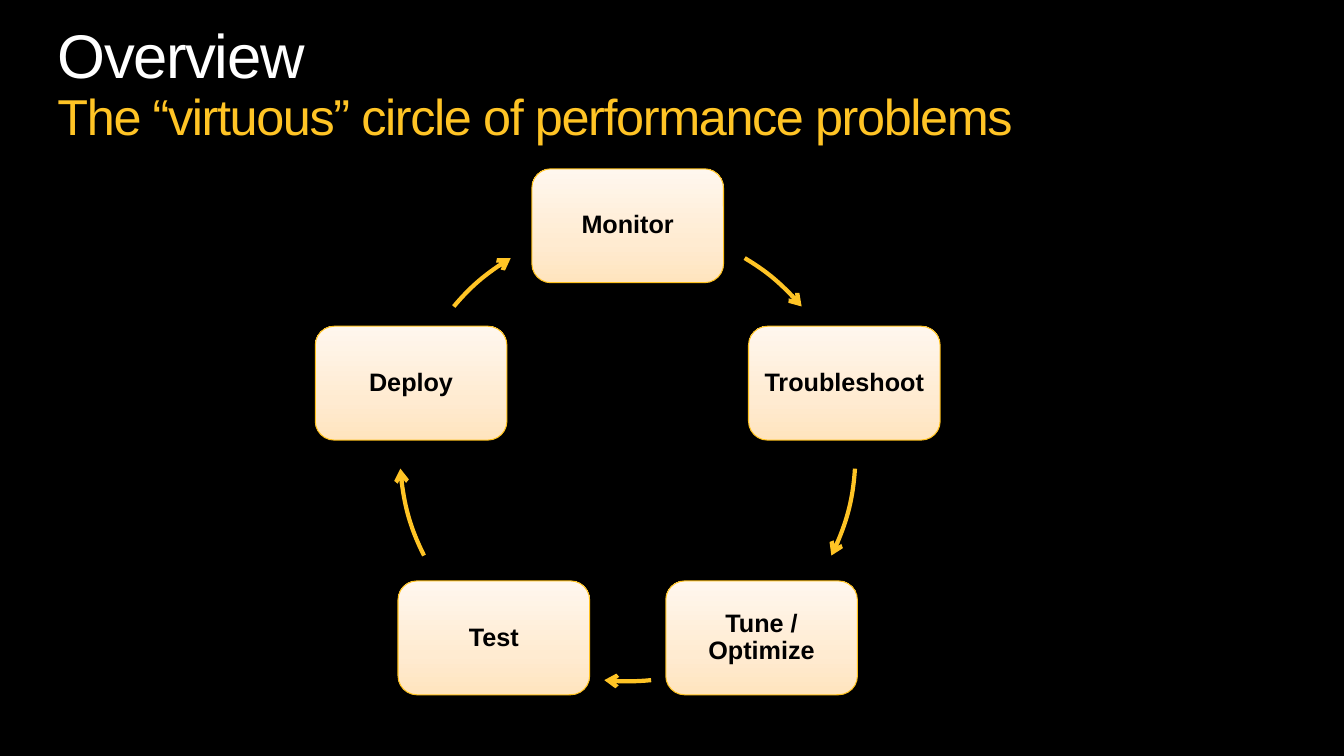
"""Build the slide that shows performance work as a circle of five steps."""
from copy import deepcopy
from math import cos, radians, sin

from lxml.etree import SubElement
from pptx import Presentation
from pptx.dml.color import RGBColor
from pptx.enum.shapes import MSO_SHAPE
from pptx.enum.text import MSO_ANCHOR, PP_ALIGN
from pptx.oxml.ns import qn
from pptx.util import Cm, Pt

MID_X, MID_Y, RADIUS = 15.82, 11.43, 5.74
BOX_W, BOX_H = 4.83, 2.87
STEPS = ["Monitor", "Troubleshoot", "Tune / Optimize", "Test", "Deploy"]
ARCS = [(300.9, 319.8), (3.8, 26.6), (84.1, 95.9), (153.4, 176.2), (220.2, 239.1)]


def color(code):
    return RGBColor.from_string(code)


def write(para, text, size=18, fill="000000", bold=False, track=0):
    run = para.add_run()
    run.text = text
    font = run.font
    font.name, font.size, font.bold = "Arial", Pt(size), bold
    font.color.rgb = color(fill)
    if track:
        run._r.get_or_add_rPr().set("spc", str(track * 100))


class Deck:
    gold = "FFC425"
    edge = "FFC21F"
    tints = [(0, "FFE4BE"), (0.35, "FFEBD1"), (1, "FFF7EE")]

    def __init__(self):
        self.prs = Presentation()
        self.prs.slide_width, self.prs.slide_height = Cm(33.87), Cm(19.05)
        self.slide = self.prs.slides.add_slide(self.prs.slide_layouts[6])
        back = self.slide.background.fill
        back.solid()
        back.fore_color.rgb = color("000000")

    def frame(self, frame, inset):
        frame.word_wrap = True
        frame.margin_left = frame.margin_right = Cm(inset)
        frame.margin_top = frame.margin_bottom = Cm(inset)
        para = frame.paragraphs[0]
        para.line_spacing = 0.9
        return para

    def title(self, head, sub):
        box = self.slide.shapes.add_textbox(Cm(1.45), Cm(0.64), Cm(30.96), Cm(3.07))
        para = self.frame(box.text_frame, 0)
        write(para, head, size=44, fill="FFFFFF", track=-1)
        para.add_line_break()
        write(para, sub, size=36, fill=self.gold, track=-1)

    def shape(self, kind, mid, size, line, width, shade, drop):
        (x, y), (w, h) = mid, size
        shape = self.slide.shapes.add_shape(
            kind, Cm(x - w / 2), Cm(y - h / 2), Cm(w), Cm(h))
        shape.line.color.rgb = color(line)
        shape.line.width = Pt(width)
        shape.shadow.inherit = False
        cast = SubElement(
            shape._element.spPr.find(qn("a:effectLst")), qn("a:outerShdw"),
            blurRad=str(Pt(3.1)), dist=str(Pt(drop)), dir="5400000", rotWithShape="0")
        tone = SubElement(cast, qn("a:srgbClr"), val="000000")
        SubElement(tone, qn("a:alpha"), val=str(shade * 1000))
        return shape

    def box(self, text, mid):
        box = self.shape(MSO_SHAPE.ROUNDED_RECTANGLE, mid, (BOX_W, BOX_H),
                         self.edge, 0.75, 38, 1.6)
        box.fill.gradient()
        box.fill.gradient_angle = 90
        stops = box._element.spPr.find(qn("a:gradFill")).find(qn("a:gsLst"))
        stops.append(deepcopy(stops[-1]))
        for stop, (place, tint) in zip(box.fill.gradient_stops, self.tints):
            stop.position = place
            stop.color.rgb = color(tint)
        box.text_frame.vertical_anchor = MSO_ANCHOR.MIDDLE
        para = self.frame(box.text_frame, 0.18)
        para.alignment = PP_ALIGN.CENTER
        write(para, text, bold=True)

    def arc(self, start, end):
        arc = self.shape(MSO_SHAPE.ARC, (MID_X, MID_Y), (2 * RADIUS, 2 * RADIUS),
                         self.gold, 3, 35, 1.8)
        arc.fill.background()
        arc.adjustments[0], arc.adjustments[1] = start * 0.6, end * 0.6
        SubElement(arc.line._get_or_add_ln(), qn("a:tailEnd"), type="arrow")


def main():
    deck = Deck()
    deck.title("Overview", "The “virtuous” circle of performance problems")
    for i, (step, (start, end)) in enumerate(zip(STEPS, ARCS)):
        turn = radians(i * 360 / len(STEPS) - 90)
        deck.box(step, (MID_X + RADIUS * cos(turn), MID_Y + RADIUS * sin(turn)))
        deck.arc(start, end)
    deck.prs.save("out.pptx")


if __name__ == "__main__":
    main()
